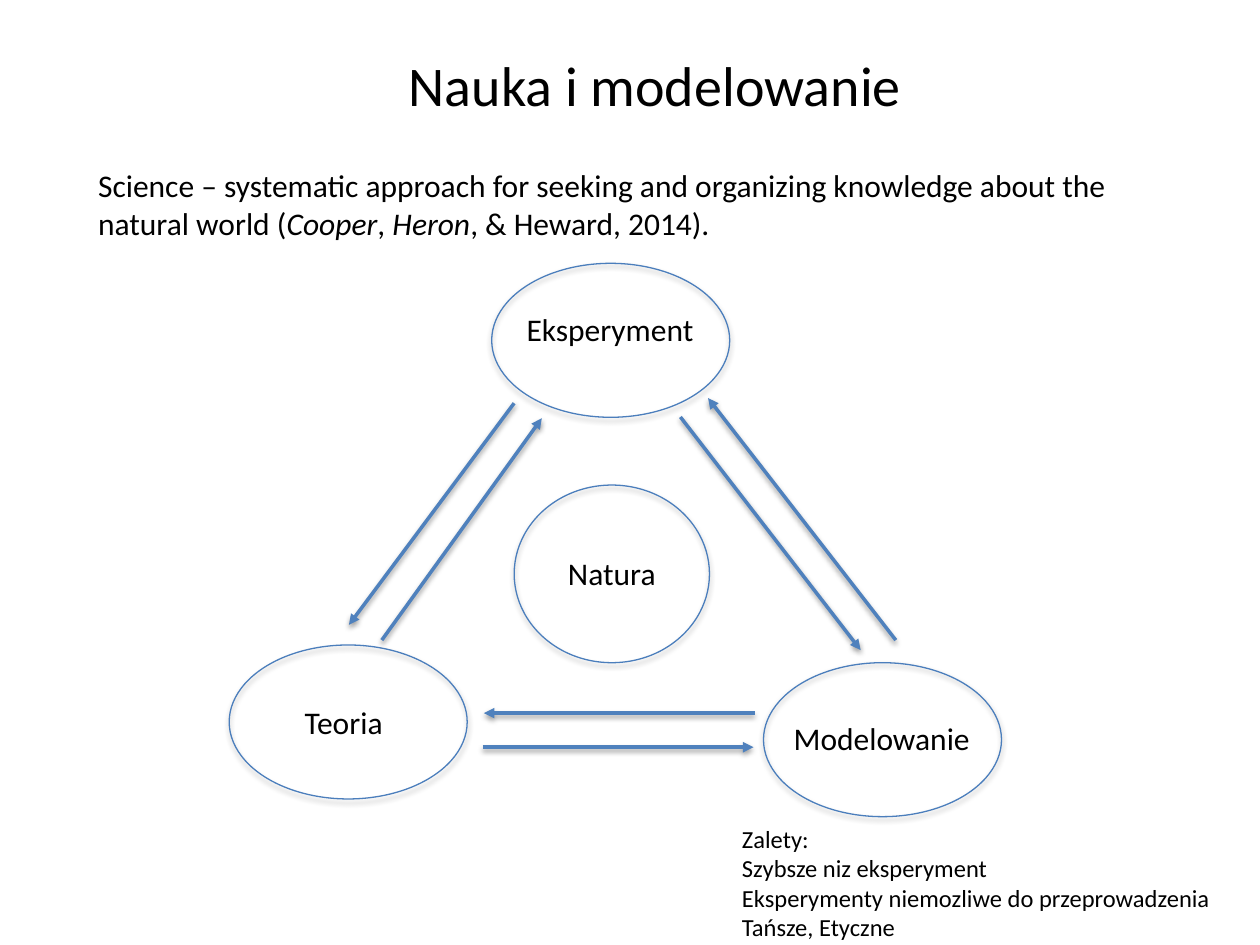
from collections import namedtuple
from dataclasses import dataclass

from lxml import etree
from pptx import Presentation
from pptx.dml.color import RGBColor
from pptx.enum import shapes, text
from pptx.oxml import ns
from pptx.util import Pt

Box = namedtuple("Box", "left top width height")


@dataclass(frozen=True)
class Theme:
    font: str = "Calibri"
    ink: str = "000000"
    outline: str = "4B7EBC"
    arrow: str = "4F81BD"
    title_size: float = 32
    body_size: float = 18
    note_size: float = 14
    outline_width: float = 0.75
    arrow_width: float = 2


THEME = Theme()
NODE_SIZE = (136, 88)
NODES = [
    ("Modelowanie", (305.3, 228.7), NODE_SIZE, (315.4, 257.5, 120, 29)),
    ("Teoria", (0, 218.6), NODE_SIZE, (36, 248.2, 64, 29)),
    ("Eksperyment", (150, 0.5), NODE_SIZE, (162.8, 23.5, 111, 29)),
    ("Natura", (162.8, 127.2), (111.6, 101.5), (186.5, 163.2, 69, 29)),
]
ARROWS = [
    ((162.8, 80.4), (68.4, 207.1)),
    ((87.2, 215.8), (178.6, 89)),
    ((300.3, 257.5), (145.5, 257.5)),
    ((144.8, 277), (299.6, 277)),
    ((380.9, 215.8), (273.6, 77.5)),
    ((257.8, 88.3), (360.8, 221.5)),
]
DEFINITION = [
    ("Science – systematic approach for seeking and organizing knowledge about the natural world (", False),
    ("Cooper", True),
    (", ", False),
    ("Heron", True),
    (", & Heward, 2014).", False),
]
ADVANTAGES = [
    "Zalety:",
    "Szybsze niz eksperyment",
    "Eksperymenty niemozliwe do przeprowadzenia",
    "Tańsze, Etyczne",
]


def add_text(slide, box, paragraphs, *, size, wrap=False,
             align=text.PP_ALIGN.LEFT, anchor=text.MSO_ANCHOR.TOP):
    shape = slide.shapes.add_textbox(*map(Pt, box))
    frame = shape.text_frame
    frame.word_wrap = wrap
    frame.vertical_anchor = anchor
    for index, runs in enumerate(paragraphs):
        paragraph = frame.add_paragraph() if index else frame.paragraphs[0]
        paragraph.alignment = align
        for words, italic in runs:
            run = paragraph.add_run()
            run.text = words
            run.font.name = THEME.font
            run.font.size = Pt(size)
            run.font.italic = italic
            run.font.color.rgb = RGBColor.from_string(THEME.ink)


def style_line(shape, color, width):
    shape.line.color.rgb = RGBColor.from_string(color)
    shape.line.width = Pt(width)


def add_shadow(shape, distance, opacity):
    effects = etree.SubElement(shape._element.spPr, ns.qn("a:effectLst"))
    shadow = etree.SubElement(
        effects, ns.qn("a:outerShdw"), blurRad=str(Pt(3.1)),
        dist=str(Pt(distance)), dir=str(90 * 60000), rotWithShape="0")
    color = etree.SubElement(shadow, ns.qn("a:srgbClr"), val=THEME.ink)
    etree.SubElement(color, ns.qn("a:alpha"), val=str(opacity * 1000))


def add_node(slide, box):
    shape = slide.shapes.add_shape(shapes.MSO_SHAPE.OVAL, *map(Pt, box))
    shape.fill.background()
    style_line(shape, THEME.outline, THEME.outline_width)
    add_shadow(shape, 1.8, 35)


def add_arrow(slide, start, end):
    connector = slide.shapes.add_connector(
        shapes.MSO_CONNECTOR.STRAIGHT, *map(Pt, start + end))
    style_line(connector, THEME.arrow, THEME.arrow_width)
    etree.SubElement(connector.line._get_or_add_ln(), ns.qn("a:tailEnd"), type="triangle")
    add_shadow(connector, 1.6, 38)


def add_title(slide, box):
    add_text(slide, box, [[("Nauka i modelowanie", False)]], size=THEME.title_size,
             wrap=True, align=text.PP_ALIGN.CENTER, anchor=text.MSO_ANCHOR.MIDDLE)


def add_definition(slide, box):
    add_text(slide, box, [DEFINITION], size=THEME.body_size, wrap=True)


def add_diagram(slide, box):
    def place(x, y):
        return box.left + x, box.top + y

    for _, corner, size, _ in NODES:
        add_node(slide, place(*corner) + size)
    for label, _, _, (x, y, width, height) in NODES:
        add_text(slide, place(x, y) + (width, height), [[(label, False)]],
                 size=THEME.body_size)
    for start, end in ARROWS:
        add_arrow(slide, place(*start), place(*end))


def add_advantages(slide, box):
    add_text(slide, box, [[(line, False)] for line in ADVANTAGES], size=THEME.note_size)


def main():
    presentation = Presentation()
    presentation.slide_width, presentation.slide_height = Pt(720), Pt(540)
    slide = presentation.slides.add_slide(presentation.slide_layouts[6])
    add_title(slide, Box(68.4, 24.5, 612, 47.5))
    add_definition(slide, Box(49, 91.4, 621.4, 51))
    add_diagram(slide, Box(131, 150, 441.3, 317))
    add_advantages(slide, Box(416.9, 467.3, 284.4, 75))
    presentation.save("out.pptx")


if __name__ == "__main__":
    main()
